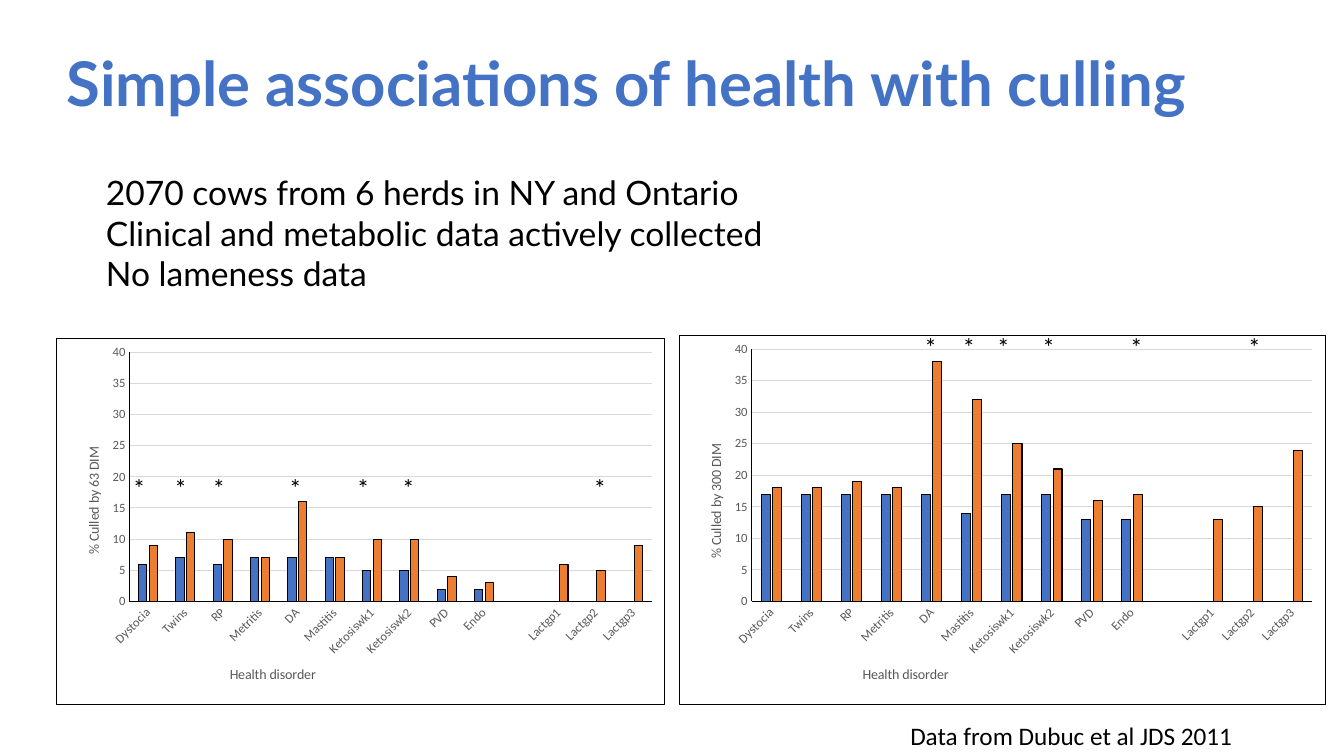
import dataclasses

import pptx
import pptx.chart.data
import pptx.dml.color
import pptx.enum.chart
import pptx.enum.text
import pptx.oxml
import pptx.oxml.ns
import pptx.util

PX = 9144  # EMU per px, 100 px to the inch
DISORDERS = ["Dystocia", "Twins", "RP", "Metritis", "DA", "Mastitis", "Ketosiswk1",
             "Ketosiswk2", "PVD", "Endo", "", "Lactgp1", "Lactgp2", "Lactgp3"]


@dataclasses.dataclass(frozen=True)
class Theme:
    heading_font: str = "Lato"
    text_font: str = "Calibri"
    blue: str = "4472C4"
    orange: str = "ED7D31"
    black: str = "000000"
    grey: str = "595959"
    grid: str = "D9D9D9"
    title_size: int = 44
    body_size: int = 24
    note_size: int = 18
    axis_title_size: int = 10
    tick_size: int = 9


THEME = Theme()


def px(length):
    return pptx.util.Emu(length * PX)


def rgb(color):
    return pptx.dml.color.RGBColor.from_string(color)


def style_font(font, name, size, color, bold=False):
    font.name, font.size, font.bold = name, pptx.util.Pt(size), bold
    font.color.rgb = rgb(color)


def style_line(line, color, width):
    line.color.rgb = rgb(color)
    line.width = pptx.util.Pt(width)


def place(shape, left, top, width, height):
    shape.left, shape.top = px(left), px(top)
    shape.width, shape.height = px(width), px(height)


def add_run(para, text, *font_style):
    span = para.add_run()
    span.text = text
    style_font(span.font, *font_style)


def fill_title(title, text):
    place(title, 56, 13, 1150, 145)
    title.text_frame.vertical_anchor = pptx.enum.text.MSO_ANCHOR.MIDDLE
    para = title.text_frame.paragraphs[0]
    para.alignment = pptx.enum.text.PP_ALIGN.LEFT
    para.line_spacing = 0.9
    add_run(para, text, THEME.heading_font, THEME.title_size, THEME.blue, True)


def fill_body(body, lines):
    place(body, 95, 166, 859, 131)
    frame = body.text_frame
    frame.auto_size = pptx.enum.text.MSO_AUTO_SIZE.NONE
    for index, text in enumerate(lines):
        para = frame.add_paragraph() if index else frame.paragraphs[0]
        properties = para._p.get_or_add_pPr()
        properties.set("marL", "0")
        properties.set("indent", "0")
        properties.append(pptx.oxml.parse_xml(
            f'<a:buNone {pptx.oxml.ns.nsdecls("a")}/>'))
        para.space_before = pptx.util.Pt(0)
        add_run(para, text, THEME.heading_font, THEME.body_size, THEME.black)


def add_note(page, text, left, top, width):
    box = page.shapes.add_textbox(px(left), px(top), px(width), px(40))
    box.text_frame.word_wrap = False
    box.text_frame.auto_size = pptx.enum.text.MSO_AUTO_SIZE.SHAPE_TO_FIT_TEXT
    add_run(box.text_frame.paragraphs[0], text,
            THEME.text_font, THEME.note_size, THEME.black)


def set_layout(element, index, inner=False, **fractions):
    """Fix a chart part at fractions (x, y, w, h) of the chart's size."""
    for old in element.findall(pptx.oxml.ns.qn("c:layout")):
        element.remove(old)
    target = '<c:layoutTarget val="inner"/>' if inner else ""
    modes = "".join(f'<c:{key}Mode val="edge"/>' for key in "xy")
    values = "".join(f'<c:{key} val="{value:.4f}"/>' for key, value in fractions.items())
    element.insert(index, pptx.oxml.parse_xml(
        f'<c:layout {pptx.oxml.ns.nsdecls("c")}><c:manualLayout>'
        f'{target}{modes}{values}</c:manualLayout></c:layout>'))


def style_axis(axis, title, x, y):
    axis.major_tick_mark = axis.minor_tick_mark = pptx.enum.chart.XL_TICK_MARK.NONE
    style_font(axis.tick_labels.font, THEME.text_font, THEME.tick_size, THEME.grey)
    style_line(axis.format.line, THEME.black, 1)
    add_run(axis.axis_title.text_frame.paragraphs[0], title,
            THEME.text_font, THEME.axis_title_size, THEME.grey)
    set_layout(axis.axis_title._element, 1, x=x, y=y)


def add_border(chart):
    chart._chartSpace.chart.addnext(pptx.oxml.parse_xml(
        f'<c:spPr {pptx.oxml.ns.nsdecls("c", "a")}><a:noFill/><a:ln w="9525"><a:solidFill>'
        f'<a:srgbClr val="{THEME.black}"/></a:solidFill></a:ln></c:spPr>'))


def add_culling_chart(page, days, left, top, width, height, blue_values, orange_values):
    data = pptx.chart.data.CategoryChartData()
    data.categories = DISORDERS
    data.add_series("Series 1", blue_values)
    data.add_series("Series 2", orange_values)
    chart = page.shapes.add_chart(
        pptx.enum.chart.XL_CHART_TYPE.COLUMN_CLUSTERED,
        px(left), px(top), px(width), px(height), data).chart
    chart.has_legend = chart.has_title = False
    style_font(chart.font, THEME.text_font, THEME.axis_title_size, THEME.black)
    add_border(chart)

    plot = chart.plots[0]
    plot.gap_width, plot.overlap, plot.vary_by_categories = 219, -27, False
    for series, color in zip(plot.series, (THEME.blue, THEME.orange)):
        series.format.fill.solid()
        series.format.fill.fore_color.rgb = rgb(color)
        style_line(series.format.line, THEME.black, 0.75)
    set_layout(chart._chartSpace.chart.plotArea, 0, inner=True, x=72 / width,
               y=14 / height, w=(width - 85) / width, h=(height - 116) / height)

    style_axis(chart.category_axis, "Health disorder", 0.28, (height - 41) / height)
    label_body = chart.category_axis._element.find(
        pptx.oxml.ns.qn("c:txPr")).find(pptx.oxml.ns.qn("a:bodyPr"))
    label_body.set("rot", "-2700000")
    label_body.set("vert", "horz")

    value_axis = chart.value_axis
    style_axis(value_axis, f"% Culled by {days} DIM", 25 / width, 106 / height)
    value_axis.minimum_scale, value_axis.maximum_scale = 0, 40
    value_axis.major_unit = 5
    style_line(value_axis.major_gridlines.format.line, THEME.grid, 0.75)


def main():
    deck = pptx.Presentation()
    deck.slide_width, deck.slide_height = px(1333), px(750)
    page = deck.slides.add_slide(deck.slide_layouts[1])
    fill_title(page.shapes.title, "Simple associations of health with culling")
    fill_body(page.placeholders[1], [
        "2070 cows from 6 herds in NY and Ontario",
        "Clinical and metabolic data actively collected",
        "No lameness data",
    ])
    add_culling_chart(page, 63, 56, 335, 604, 364,
                      [6, 7, 6, 7, 7, 7, 5, 5, 2, 2],
                      [9, 11, 10, 7, 16, 7, 10, 10, 4, 3, None, 6, 5, 9])
    add_culling_chart(page, 300, 673, 332, 642, 367,
                      [17, 17, 17, 17, 17, 14, 17, 17, 13, 13],
                      [18, 18, 19, 18, 38, 32, 25, 21, 16, 17, None, 13, 15, 24])
    star_rows = {464: (122, 163, 201, 277, 344, 389, 579),
                 324: (907, 945, 979, 1024, 1111, 1228)}
    for top, lefts in star_rows.items():
        for left in lefts:
            add_note(page, "*", left, top, 28)
    add_note(page, "Data from Dubuc et al JDS 2011", 893, 710, 384)
    deck.save("out.pptx")


if __name__ == "__main__":
    main()
